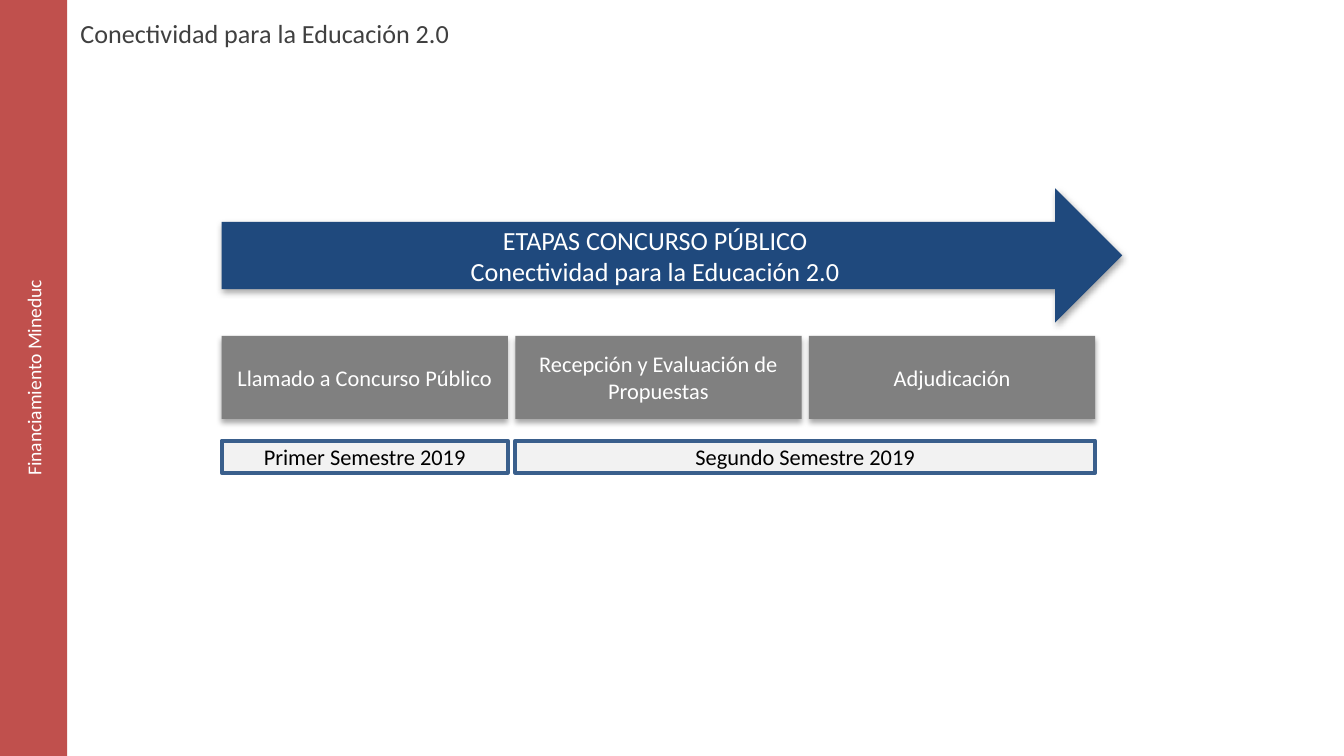
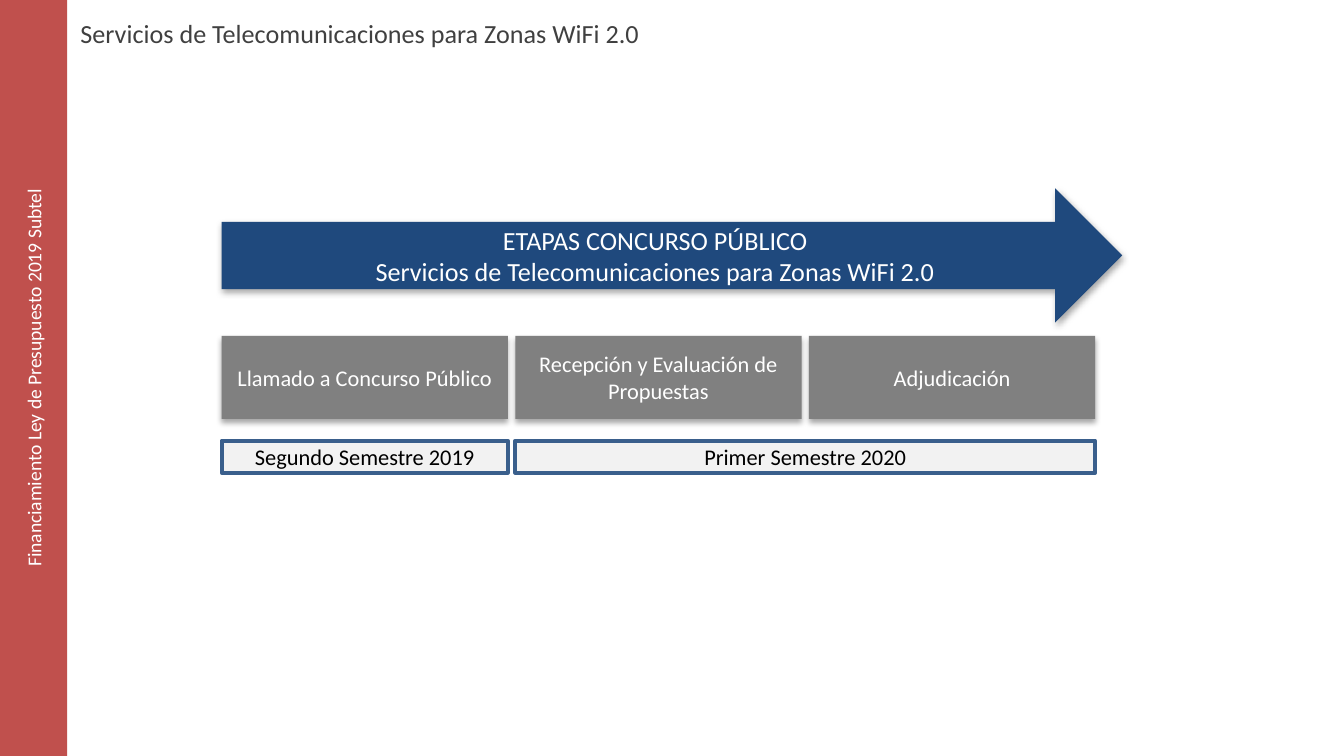
from collections import namedtuple

from lxml import etree
from pptx import Presentation
from pptx import util as u
from pptx.dml.color import RGBColor
from pptx.enum import shapes, text
from pptx.oxml.ns import qn

NAVY = RGBColor(0x1F, 0x49, 0x7D)
STEEL = RGBColor(0x3A, 0x5F, 0x8C)
RED = RGBColor(0xC0, 0x50, 0x4D)
GRAY = RGBColor(0x80, 0x80, 0x80)
PALE = RGBColor(0xF2, 0xF2, 0xF2)
DARK = RGBColor(0x40, 0x40, 0x40)
BLACK = RGBColor(0, 0, 0)
WHITE = RGBColor(0xFF, 0xFF, 0xFF)

FONT = "Calibri"
RECT = shapes.MSO_SHAPE.RECTANGLE
CENTER = text.PP_ALIGN.CENTER
Area = namedtuple("Area", "left top width height")

PAGE = Area(0, 0, 25.4, 14.29)
BAND = Area(0, 0, 1.27, PAGE.height)
TITLE = Area(BAND.width, 0.2, 22.33, 1.04)
ARROW = Area(4.19, 3.56, 17.02, 2.54)
STAGES = Area(4.19, 6.35, 16.51, 1.57)
PERIODS = Area(4.19, 8.33, 16.51, 0.61)
COLUMNS = 3
GAP = 0.14

STAGE_NAMES = [
    "Llamado a Concurso Público",
    "Recepción y Evaluación de Propuestas",
    "Adjudicación",
]


def lengths(area):
    return [u.Cm(value) for value in area]


def write(box, lines, size, color, align=CENTER, inset=True):
    frame = box.text_frame
    frame.word_wrap = True
    frame.margin_left = frame.margin_right = u.Cm(0.25 if inset else 0)
    frame.margin_top = frame.margin_bottom = u.Cm(0.13 if inset else 0)
    for index, line in enumerate(lines):
        para = frame.add_paragraph() if index else frame.paragraphs[0]
        para.alignment = align
        span = para.add_run()
        span.text = line
        span.font.name = FONT
        span.font.size = u.Pt(size)
        span.font.color.rgb = color


def add_shape(page, kind, area, fill, line=None):
    box = page.shapes.add_shape(kind, *lengths(area))
    box.shadow.inherit = False
    box.fill.solid()
    box.fill.fore_color.rgb = fill
    if line is None:
        box.line.fill.background()
    else:
        box.line.color.rgb = line
        box.line.width = u.Pt(2)
    box.text_frame.vertical_anchor = text.MSO_ANCHOR.MIDDLE
    return box


def cast_shadow(box):
    effects = box.element.spPr.find(qn("a:effectLst"))
    shadow = etree.SubElement(
        effects, qn("a:outerShdw"), blurRad="40000", dist="23000",
        dir="5400000", rotWithShape="0")
    color = etree.SubElement(shadow, qn("a:srgbClr"), val=str(BLACK))
    etree.SubElement(color, qn("a:alpha"), val="35000")


def column_span(area, first, count):
    width = (area.width - GAP * (COLUMNS - 1)) / COLUMNS
    left = area.left + first * (width + GAP)
    return Area(left, area.top, count * width + (count - 1) * GAP, area.height)


def add_arrow(page, area, subject):
    arrow = add_shape(page, shapes.MSO_SHAPE.RIGHT_ARROW, area, NAVY)
    cast_shadow(arrow)
    write(arrow, ["ETAPAS CONCURSO PÚBLICO", subject], 14, WHITE)


def add_stages(page, area):
    for index, name in enumerate(STAGE_NAMES):
        stage = add_shape(page, RECT, column_span(area, index, 1), GRAY)
        cast_shadow(stage)
        write(stage, [name], 12, WHITE)


def add_title(page, area, subject):
    title = page.shapes.add_textbox(*lengths(area))
    write(title, [subject], 14, DARK, text.PP_ALIGN.JUSTIFY)


def add_periods(page, area, names):
    for name, first, count in zip(names, (0, 1), (1, 2)):
        period = add_shape(page, RECT, column_span(area, first, count), PALE, STEEL)
        write(period, [name], 12, BLACK, inset=False)


def add_band(page, area, funding):
    band = add_shape(page, RECT, area, RED)
    write(band, [funding], 10.5, WHITE, inset=False)
    band.element.find(".//" + qn("a:bodyPr")).set("vert", "vert270")


def add_tender_page(deck, subject, funding, periods):
    page = deck.slides.add_slide(deck.slide_layouts[6])
    add_arrow(page, ARROW, subject)
    add_stages(page, STAGES)
    add_title(page, TITLE, subject)
    add_periods(page, PERIODS, periods)
    add_band(page, BAND, funding)


def main():
    deck = Presentation()
    deck.slide_width = u.Cm(PAGE.width)
    deck.slide_height = u.Cm(PAGE.height)
    add_tender_page(
        deck, "Conectividad para la Educación 2.0", "Financiamiento Mineduc",
        ["Primer Semestre 2019", "Segundo Semestre 2019"])
    add_tender_page(
        deck, "Servicios de Telecomunicaciones para Zonas WiFi 2.0",
        "Financiamiento Ley de Presupuesto 2019 Subtel",
        ["Segundo Semestre 2019", "Primer Semestre 2020"])
    deck.save("out.pptx")


if __name__ == "__main__":
    main()
